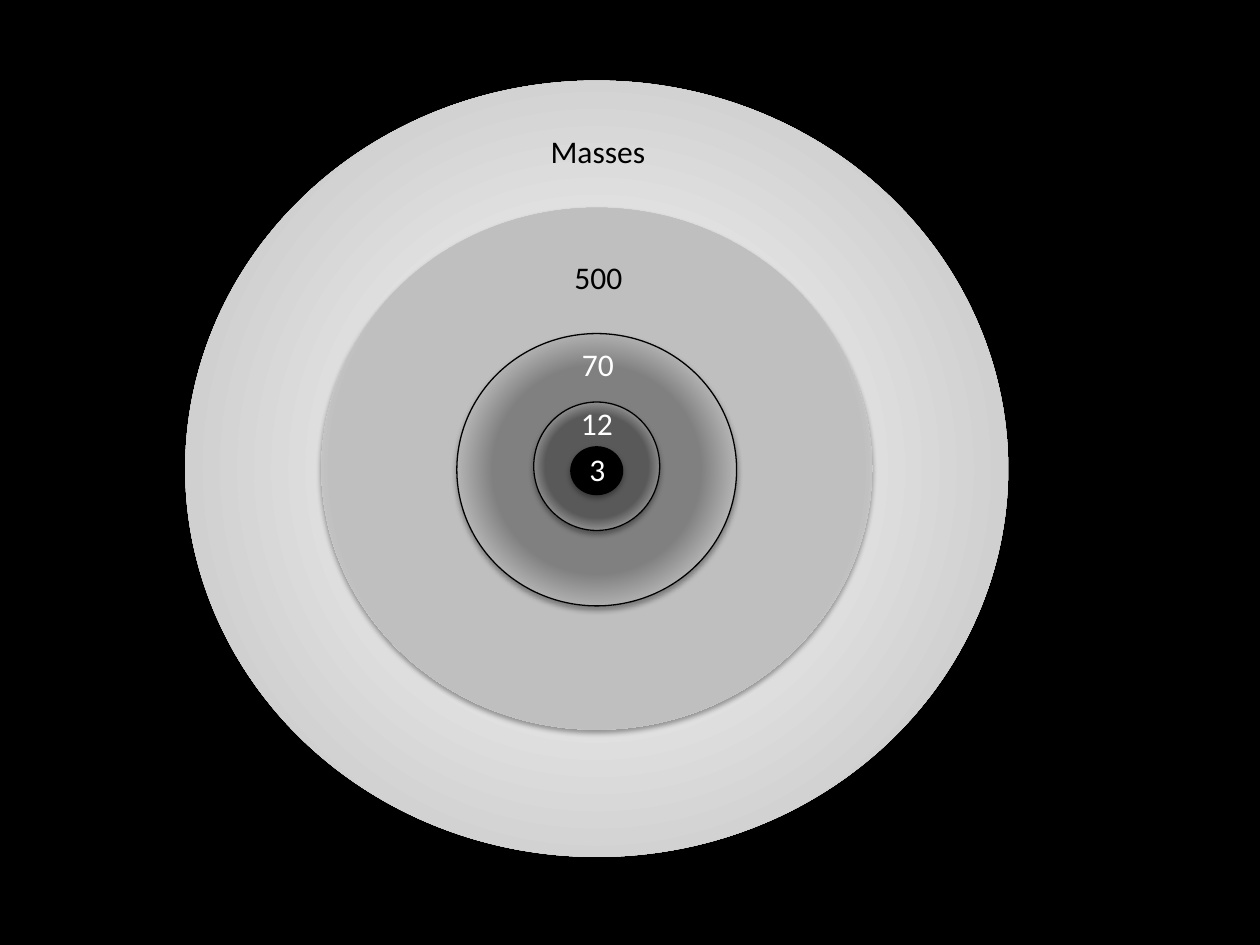
from lxml.etree import SubElement
from pptx import Presentation
from pptx.dml.color import RGBColor
from pptx.enum.shapes import MSO_SHAPE
from pptx.enum.text import MSO_AUTO_SIZE, PP_ALIGN
from pptx.oxml.ns import qn
from pptx.util import Cm, Pt

COLORS = {"black": "000000", "white": "FFFFFF", "silver": "BDBDBD",
          "light": "BFBFBF", "mid": "808080", "dark": "595959"}
CENTER_X = 12.03
RINGS = [
    dict(size=(16.59, 15.65), cy=9.45, stops=[(0, "white"), (100, "silver")], outlined=False,
         label="Masses", at=(10.85, 2.54), width=2.44, color="black", wrap=False),
    dict(size=(11.1, 10.52), cy=9.45, stops=[(70, "light"), (100, "white")], outlined=False,
         label="500", at=(11.33, 5.08), width=1.5, color="black", wrap=True),
    dict(size=(5.64, 5.49), cy=9.47, stops=[(53, "mid"), (97, "white")], outlined=True,
         label="70", at=(11.48, 6.83), width=1.24, color="white", wrap=True),
    dict(size=(2.54, 2.59), cy=9.4, stops=[(57, "dark"), (100, "white")], outlined=True,
         label="12", at=(11.46, 8.03), width=1.4, color="white", wrap=True),
    dict(size=(1.07, 0.99), cy=9.49, stops=[(0, "black")], outlined=False,
         label="3", at=(11.63, 8.94), width=0.66, color="white", wrap=True),
]


def rgb(name):
    return RGBColor.from_string(COLORS[name])


def add_color(parent, name):
    return SubElement(parent, qn("a:srgbClr"), val=COLORS[name])


def fill_radial(sp, stops):
    sp.fill.gradient()
    grad = sp._element.spPr.find(qn("a:gradFill"))
    for child in list(grad):
        grad.remove(child)
    gs_list = SubElement(grad, qn("a:gsLst"))
    for pos, name in stops:
        add_color(SubElement(gs_list, qn("a:gs"), pos=str(pos * 1000)), name)
    focus = SubElement(grad, qn("a:path"), path="circle")
    SubElement(focus, qn("a:fillToRect"), l="50000", t="50000", r="50000", b="50000")


def add_shadow(sp):
    sp.shadow.inherit = False
    effects = sp._element.spPr.find(qn("a:effectLst"))
    shadow = SubElement(effects, qn("a:outerShdw"), blurRad=str(Pt(3.1)),
                        dist=str(Pt(1.8)), dir="5400000", rotWithShape="0")
    SubElement(add_color(shadow, "black"), qn("a:alpha"), val="35000")


def add_ring(shapes, size, cy, stops, outlined):
    w, h = size
    sp = shapes.add_shape(MSO_SHAPE.OVAL, Cm(CENTER_X - w / 2), Cm(cy - h / 2), Cm(w), Cm(h))
    if len(stops) > 1:
        fill_radial(sp, stops)
    else:
        sp.fill.solid()
        sp.fill.fore_color.rgb = rgb(stops[0][1])
    if outlined:
        sp.line.color.rgb = rgb("black")
        sp.line.width = Pt(0.75)
    else:
        sp.line.fill.background()
    add_shadow(sp)


def add_text(shapes, text, at, width, color, wrap=True, size=18, font="Calibri"):
    x, y = at
    tf = shapes.add_textbox(Cm(x), Cm(y), Cm(width), Cm(1.02)).text_frame
    tf.word_wrap = wrap
    tf.auto_size = MSO_AUTO_SIZE.SHAPE_TO_FIT_TEXT
    p = tf.paragraphs[0]
    p.alignment = PP_ALIGN.LEFT
    r = p.add_run()
    r.text = text
    r.font.size = Pt(size)
    r.font.name = font
    r.font.color.rgb = rgb(color)


def main():
    """Build nested rings, each grouped with its label, on a black slide."""
    prs = Presentation()
    prs.slide_width, prs.slide_height = Cm(25.4), Cm(19.05)
    s = prs.slides.add_slide(prs.slide_layouts[6])
    s.background.fill.solid()
    s.background.fill.fore_color.rgb = rgb("black")
    for ring in RINGS:
        shapes = s.shapes.add_group_shape().shapes
        add_ring(shapes, ring["size"], ring["cy"], ring["stops"], ring["outlined"])
        add_text(shapes, ring["label"], at=ring["at"], width=ring["width"],
                 color=ring["color"], wrap=ring["wrap"])
    prs.save("out.pptx")


if __name__ == "__main__":
    main()
